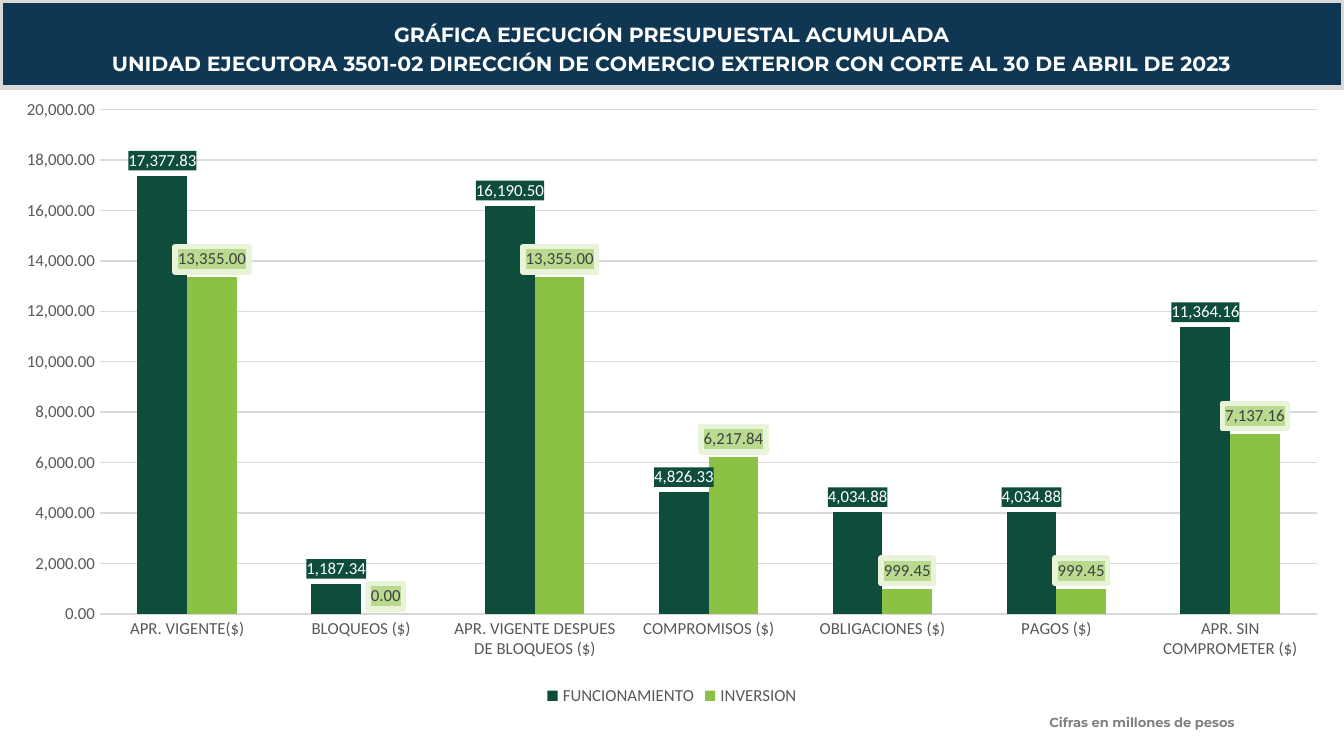
from dataclasses import dataclass

from lxml.etree import SubElement
from pptx import Presentation
from pptx.chart.data import CategoryChartData
from pptx.dml.color import RGBColor
from pptx.enum.chart import XL_CHART_TYPE, XL_LABEL_POSITION, XL_LEGEND_POSITION, XL_TICK_MARK
from pptx.enum.text import MSO_ANCHOR, MSO_AUTO_SIZE, PP_ALIGN
from pptx.oxml import parse_xml
from pptx.oxml.ns import nsdecls, qn
from pptx.util import Inches, Pt


@dataclass(frozen=True)
class Theme:
    navy: str = "0F3754"
    white: str = "FFFFFF"
    rule: str = "D9D9D9"
    caption: str = "808080"
    axis_text: str = "595959"
    label_text: str = "404040"
    green: str = "0E4D3C"
    lime: str = "8BC145"
    lime_label: str = "B9DA8F"
    lime_border: str = "E8F3DA"
    heading_font: str = "Montserrat"
    chart_font: str = "Calibri"
    heading_size: float = 11
    caption_size: float = 7
    chart_size: float = 9


THEME = Theme()
NUMBER_FORMAT = "#,##0.00"
HEADING = [
    "GRÁFICA EJECUCIÓN PRESUPUESTAL ACUMULADA",
    "UNIDAD EJECUTORA 3501-02 DIRECCIÓN DE COMERCIO EXTERIOR CON CORTE AL 30 DE ABRIL DE 2023",
]
CATEGORIES = [
    "APR. VIGENTE($)", "BLOQUEOS ($)", "APR. VIGENTE DESPUES DE BLOQUEOS ($)",
    "COMPROMISOS ($)", "OBLIGACIONES ($)", "PAGOS ($)", "APR. SIN COMPROMETER ($)",
]
# name, values, bar colour, label text, label fill, label border
SERIES = [
    ("FUNCIONAMIENTO", [17377.83, 1187.34, 16190.50, 4826.33, 4034.88, 4034.88, 11364.16],
     THEME.green, THEME.white, THEME.green, None),
    ("INVERSION", [13355, 0, 13355, 6217.84, 999.45, 999.45, 7137.16],
     THEME.lime, THEME.label_text, THEME.lime_label, THEME.lime_border),
]


def set_all(target, values):
    for name, value in values.items():
        setattr(target, name, value)


def set_font(font, family, size, color, bold=False):
    set_all(font, {"name": family, "size": Pt(size), "bold": bold})
    font.color.rgb = RGBColor.from_string(color)


def set_box(part, box):
    set_all(part, dict(zip(("left", "top", "width", "height"), map(Inches, box))))


def add_heading(slide, box):
    banner = slide.shapes.title
    set_box(banner, box)
    banner.fill.solid()
    banner.fill.fore_color.rgb = RGBColor.from_string(THEME.navy)
    banner.line.color.rgb = RGBColor.from_string(THEME.rule)
    banner.line.width = Pt(3)
    frame = banner.text_frame
    set_all(frame, {
        "text": "\n".join(HEADING), "word_wrap": True, "auto_size": MSO_AUTO_SIZE.NONE,
        "vertical_anchor": MSO_ANCHOR.MIDDLE, "margin_left": 0, "margin_right": 0,
        "margin_top": Inches(0.1), "margin_bottom": 0,
    })
    for paragraph in frame.paragraphs:
        set_all(paragraph, {"alignment": PP_ALIGN.CENTER, "line_spacing": 0.9,
                            "space_before": Pt(3.6)})
        set_font(paragraph.runs[0].font, THEME.heading_font, THEME.heading_size,
                 THEME.white, True)


def add_caption(slide, box):
    frame = slide.shapes.add_textbox(*map(Inches, box)).text_frame
    set_all(frame, {"text": "Cifras en millones de pesos", "word_wrap": True})
    paragraph = frame.paragraphs[0]
    paragraph.line_spacing = 0.9
    set_font(paragraph.runs[0].font, THEME.heading_font, THEME.caption_size,
             THEME.caption, True)


def fill_labels(labels, fill, border):
    """Give the data labels a filled box, with a wide border if one is named."""
    box = parse_xml(f"<c:spPr {nsdecls('c', 'a')}/>")
    SubElement(SubElement(box, qn("a:solidFill")), qn("a:srgbClr"), val=fill)
    if border:
        line = SubElement(box, qn("a:ln"), w=str(Pt(3)))
        SubElement(SubElement(line, qn("a:solidFill")), qn("a:srgbClr"), val=border)
    labels.font._element.getparent().getparent().getparent().addprevious(box)


def format_series(series, bar, text, fill, border):
    series.format.fill.solid()
    series.format.fill.fore_color.rgb = RGBColor.from_string(bar)
    labels = series.data_labels
    set_all(labels, {"show_value": True, "number_format": NUMBER_FORMAT,
                     "number_format_is_linked": False,
                     "position": XL_LABEL_POSITION.OUTSIDE_END})
    set_font(labels.font, THEME.chart_font, THEME.chart_size, text)
    fill_labels(labels, fill, border)


def add_budget_chart(slide, box):
    data = CategoryChartData(number_format=NUMBER_FORMAT)
    data.categories = CATEGORIES
    for name, values, *_ in SERIES:
        data.add_series(name, values)
    chart = slide.shapes.add_chart(
        XL_CHART_TYPE.COLUMN_CLUSTERED, *map(Inches, box), data).chart
    set_all(chart, {"has_title": False, "has_legend": True})
    set_font(chart.font, THEME.chart_font, THEME.chart_size, THEME.axis_text)
    set_all(chart.legend, {"position": XL_LEGEND_POSITION.BOTTOM, "include_in_layout": False})

    plot = chart.plots[0]
    set_all(plot, {"gap_width": 150, "overlap": 0, "vary_by_categories": False})
    for series, (_, _, *colors) in zip(plot.series, SERIES):
        format_series(series, *colors)

    for axis in (chart.category_axis, chart.value_axis):
        set_all(axis, {"major_tick_mark": XL_TICK_MARK.NONE,
                       "minor_tick_mark": XL_TICK_MARK.NONE})
        axis.format.line.fill.background()
    for part in (chart.category_axis.tick_labels, chart.value_axis.tick_labels, chart.legend):
        set_font(part.font, THEME.chart_font, THEME.chart_size, THEME.axis_text)
    amounts = chart.value_axis
    set_all(amounts, {"minimum_scale": 0, "maximum_scale": 20000, "major_unit": 2000})
    set_all(amounts.tick_labels, {"number_format": NUMBER_FORMAT,
                                  "number_format_is_linked": False})
    grid = amounts.major_gridlines.format.line
    grid.color.rgb = RGBColor.from_string(THEME.rule)
    grid.width = Pt(0.75)


def main():
    deck = Presentation()
    width = Inches(10)
    set_all(deck, {"slide_width": width, "slide_height": width * 9 // 16})
    slide = deck.slides.add_slide(deck.slide_layouts[5])
    add_heading(slide, (0, 0, 10, 0.65))
    add_caption(slide, (7.71, 5.28, 1.91, 0.21))
    add_budget_chart(slide, (0, 0.65, 10, 4.64))
    deck.save("out.pptx")


if __name__ == "__main__":
    main()
